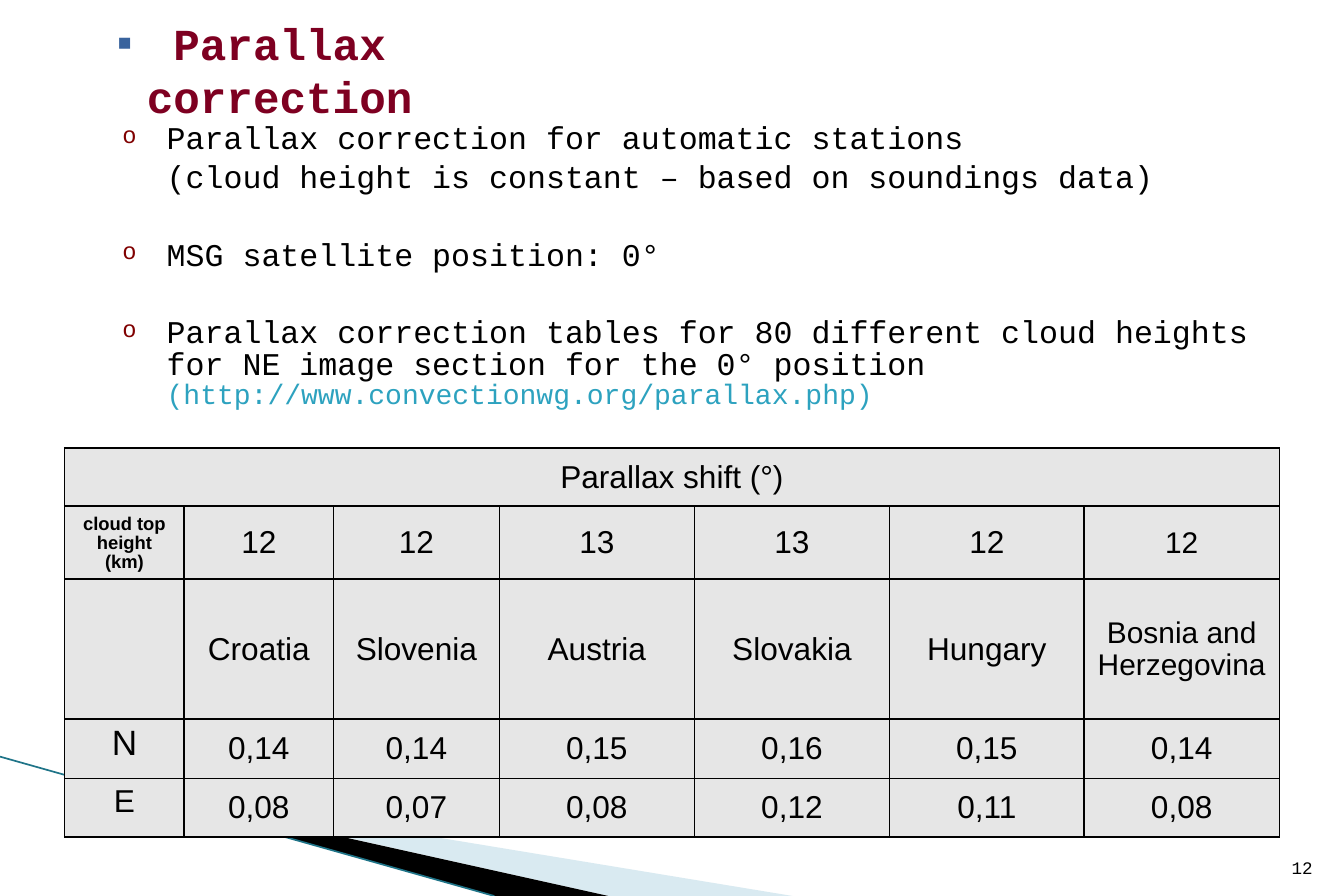
import pptx
import pptx.dml.color
import pptx.enum.shapes
import pptx.enum.text
import pptx.oxml.ns
import pptx.util
from lxml import etree

Cm = pptx.util.Cm
Pt = pptx.util.Pt
ALIGN = pptx.enum.text.PP_ALIGN
ANCHOR = pptx.enum.text.MSO_ANCHOR

MONO = "Courier New"
SANS = "Arial"
BLACK = "000000"


def colour(hex_code):
    return pptx.dml.color.RGBColor.from_string(hex_code)


def add_element(parent, tag, **attributes):
    child = etree.SubElement(parent, pptx.oxml.ns.qn(tag))
    for key, value in attributes.items():
        child.set(key, str(value))
    return child


def add_run(paragraph, text, size, font, hex_code=BLACK, bold=False):
    run = paragraph.add_run()
    run.text = text
    run.font.size = Pt(size)
    run.font.name = font
    run.font.bold = bold
    run.font.color.rgb = colour(hex_code)


def set_indent(paragraph, margin, hanging=0):
    properties = paragraph._p.get_or_add_pPr()
    properties.set("marL", str(Cm(margin)))
    properties.set("indent", str(-Cm(hanging)))


def add_bullet(paragraph, char, hex_code, font, percent=100):
    properties = paragraph._p.get_or_add_pPr()
    add_element(add_element(properties, "a:buClr"), "a:srgbClr", val=hex_code)
    add_element(properties, "a:buSzPct", val=percent * 1000)
    add_element(properties, "a:buFont", typeface=font)
    add_element(properties, "a:buChar", char=char)


def set_frame(frame, anchor, left, top, right, bottom):
    frame.word_wrap = True
    frame.auto_size = pptx.enum.text.MSO_AUTO_SIZE.NONE
    frame.vertical_anchor = anchor
    frame.margin_left, frame.margin_top = Cm(left), Cm(top)
    frame.margin_right, frame.margin_bottom = Cm(right), Cm(bottom)


def add_text_box(slide, left, top, width, height):
    return slide.shapes.add_textbox(Cm(left), Cm(top), Cm(width), Cm(height)).text_frame


def add_wedge(slide, points, hex_code, opacity=100):
    corners = [(Cm(x), Cm(y)) for x, y in points]
    builder = slide.shapes.build_freeform(*corners[0])
    builder.add_line_segments(corners[1:], close=True)
    wedge = builder.convert_to_shape()
    wedge.shadow.inherit = False
    wedge.line.fill.background()
    wedge.fill.solid()
    wedge.fill.fore_color.rgb = colour(hex_code)
    if opacity < 100:
        fill_colour = wedge._element.spPr.find(".//" + pptx.oxml.ns.qn("a:srgbClr"))
        add_element(fill_colour, "a:alpha", val=opacity * 1000)


def add_corner_decoration(slide):
    add_wedge(slide, [(1.47, 15.62), (15.92, 18), (12.22, 18), (1.47, 15.6)], "A0CBDC", 40)
    add_wedge(slide, [(1.42, 15.6), (12.22, 18), (9.93, 18), (1.45, 15.6)], BLACK)
    edge = slide.shapes.add_connector(
        pptx.enum.shapes.MSO_CONNECTOR.STRAIGHT, Cm(0), Cm(15.2), Cm(9.93), Cm(18))
    edge.line.color.rgb = colour("1F7488")
    edge.line.width = Pt(0.95)
    add_element(edge._element.spPr, "a:effectLst")


def format_title(slide):
    title = slide.shapes.title
    title.left, title.top, title.width, title.height = Cm(2.1), Cm(0.41), Cm(10.16), Cm(2)
    set_frame(title.text_frame, ANCHOR.MIDDLE, 0.25, 0.08, 0.25, 0.13)
    heading = title.text_frame.paragraphs[0]
    heading.alignment = ALIGN.LEFT
    heading.line_spacing = 1.0
    heading.space_before = Pt(0)
    set_indent(heading, 0.6, 0.6)
    add_bullet(heading, "▪", "39639D", SANS)
    add_run(heading, " Parallax correction", 25.2, MONO, "7E0021", bold=True)


def add_points(slide):
    # Each point: bulleted, space before in points, runs of (text, size, colour)
    points = [
        (True, 0, [("Parallax correction for automatic stations", 18, BLACK)]),
        (False, 4, [("(cloud height is constant – based on soundings data)", 18, BLACK)]),
        (True, 26, [("MSG satellite position: 0°", 18, BLACK)]),
        (True, 26, [
            ("Parallax correction tables for 80 different cloud heights "
             "for NE image section for the 0° position ", 18, BLACK),
            ("(http://www.convectionwg.org/parallax.php)", 16, "2DA2BF")]),
    ]
    frame = add_text_box(slide, 1.91, 2.39, 23.72, 6.4)
    set_frame(frame, ANCHOR.TOP, 0.25, 0.11, 0.25, 0.13)
    for index, (bulleted, space_before, runs) in enumerate(points):
        point = frame.add_paragraph() if index else frame.paragraphs[0]
        point.line_spacing = 0.84
        point.space_before = Pt(space_before)
        set_indent(point, 1.19, 0.89 if bulleted else 0)
        if bulleted:
            add_bullet(point, "o", "800000", MONO, 75)
        for text, size, hex_code in runs:
            add_run(point, text, size, MONO, hex_code)


def format_cell(cell, text, size, bold, anchor, margins):
    properties = cell._tc.get_or_add_tcPr()
    for side in ("a:lnL", "a:lnR", "a:lnT", "a:lnB"):
        border = add_element(properties, side, w=Pt(1))
        add_element(add_element(border, "a:solidFill"), "a:srgbClr", val=BLACK)
    cell.fill.solid()
    cell.fill.fore_color.rgb = colour("E6E6E6")
    cell.vertical_anchor = anchor
    cell.margin_left, cell.margin_top, cell.margin_right, cell.margin_bottom = map(Cm, margins)
    if text:
        entry = cell.text_frame.paragraphs[0]
        entry.alignment = ALIGN.CENTER
        entry.line_spacing = 0.93
        add_run(entry, text, size, SANS, bold=bold)


def add_shift_table(slide):
    rows = [
        ["Parallax shift (°)"] + [""] * 6,
        ["cloud top height (km)", "12", "12", "13", "13", "12", "12"],
        ["", "Croatia", "Slovenia", "Austria", "Slovakia", "Hungary", "Bosnia and Herzegovina"],
        ["N", "0,14", "0,14", "0,15", "0,16", "0,15", "0,14"],
        ["E", "0,08", "0,07", "0,08", "0,12", "0,11", "0,08"],
    ]
    widths = [2.4, 3, 3.33, 3.92, 3.92, 3.91, 3.92]
    heights = [1.17, 1.45, 2.82, 1.19, 1.18]
    sizes = {(1, 0): 10.5, (1, 6): 17, (2, 6): 17, (3, 0): 20}
    shifts = slide.shapes.add_table(
        len(rows), len(widths), Cm(1.3), Cm(9), Cm(sum(widths)), Cm(sum(heights))).table
    shifts.first_row = shifts.horz_banding = False
    for column, width in zip(shifts.columns, widths):
        column.width = Cm(width)
    for r, (row, height) in enumerate(zip(rows, heights)):
        shifts.rows[r].height = Cm(height)
        for c, text in enumerate(row):
            row_label = c == 0 and r > 0
            margins = (0.1, 0.15, 0.1, 0.1) if c == 0 and r > 2 else (0.25, 0.18, 0.25, 0.13)
            format_cell(shifts.cell(r, c), text, sizes.get((r, c), 18), (r, c) == (1, 0),
                        ANCHOR.TOP if row_label else ANCHOR.MIDDLE, margins)
    shifts.cell(0, 0).merge(shifts.cell(0, len(widths) - 1))


def add_page_number(slide):
    frame = add_text_box(slide, 25.53, 16.81, 1.09, 0.97)
    set_frame(frame, ANCHOR.BOTTOM, 0.25, 0.13, 0.25, 0.13)
    number = frame.paragraphs[0]
    number.alignment = ALIGN.RIGHT
    add_run(number, "12", 10, MONO)


def main():
    deck = pptx.Presentation()
    deck.slide_width, deck.slide_height = Cm(27), Cm(18)
    slide = deck.slides.add_slide(deck.slide_layouts[5])
    add_corner_decoration(slide)
    format_title(slide)
    add_points(slide)
    add_shift_table(slide)
    add_page_number(slide)
    deck.save("out.pptx")


if __name__ == "__main__":
    main()
